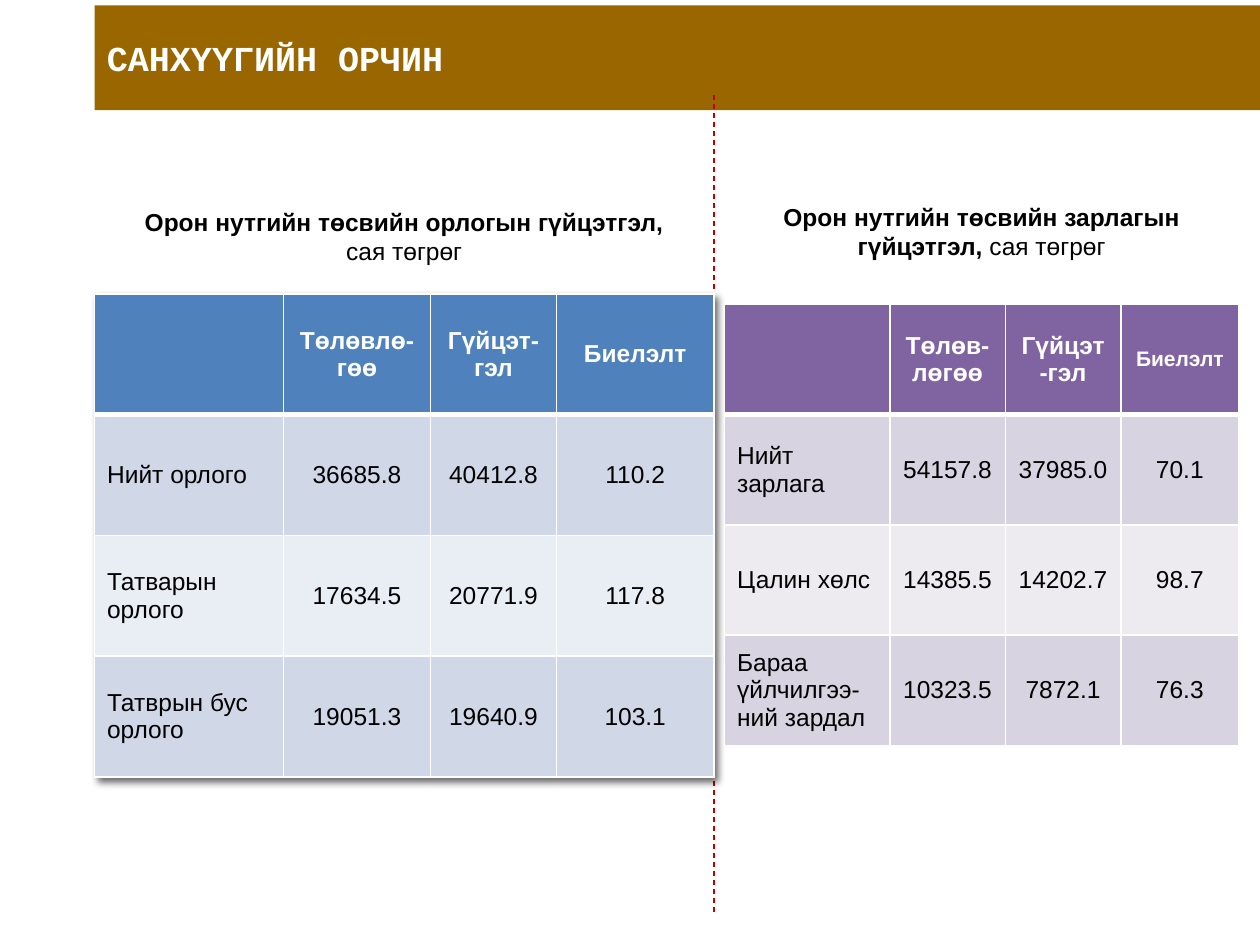
import pptx
import pptx.util
import pptx.dml.color
import pptx.enum.dml
import pptx.enum.shapes
import pptx.enum.text
import pptx.oxml
import pptx.oxml.ns
from lxml import etree

ALIGN = pptx.enum.text.PP_ALIGN
MIDDLE = pptx.enum.text.MSO_ANCHOR.MIDDLE
rgb = pptx.dml.color.RGBColor.from_string
qn = pptx.oxml.ns.qn

prs = pptx.Presentation()
prs.slide_width = pptx.util.Inches(10)
prs.slide_height = pptx.util.Inches(7.5)
unit = prs.slide_width / 120


def grid(*cells):
    return [pptx.util.Emu(round(c * unit)) for c in cells]


def add_run(p, text, size=14, color="000000", bold=False, font="Arial"):
    r = p.add_run()
    r.text = text
    r.font.size = pptx.util.Pt(size)
    r.font.name = font
    r.font.bold = bold
    r.font.color.rgb = rgb(color)


s = prs.slides.add_slide(prs.slide_layouts[6])

sp = s.shapes.add_shape(pptx.enum.shapes.MSO_SHAPE.RECTANGLE, *grid(9, 0.5, 111, 10))
sp.shadow.inherit = False
sp.fill.solid()
sp.fill.fore_color.rgb = rgb("996600")
sp.line.fill.background()
tf = sp.text_frame
tf.word_wrap = True
tf.vertical_anchor = MIDDLE
p = tf.paragraphs[0]
p.alignment = ALIGN.JUSTIFY
add_run(p, "САНХҮҮГИЙН ОРЧИН", 20, "FFFFFF", True, "Courier New")

divider = s.shapes.add_connector(
    pptx.enum.shapes.MSO_CONNECTOR.STRAIGHT, *grid(68, 9, 68, 87)
)
divider.line.color.rgb = rgb("C00000")
divider.line.width = pptx.util.Pt(0.75)
divider.line.dash_style = pptx.enum.dml.MSO_LINE.DASH
etree.SubElement(divider.line._get_or_add_ln().getparent(), qn("a:effectLst"))

panels = [
    {
        "caption": "Орон нутгийн төсвийн орлогын гүйцэтгэл,",
        "caption_at": (11, 20, 55, 5),
        "origin": (9, 28),
        "cols": (18, 14, 12, 15),
        "row": 11.5,
        "fills": ("4F81BD", "D0D8E8", "E9EDF4"),
        "last_size": 14,
        "shadow": True,
        "rows": [
            ("", "Төлөвлө-гөө", "Гүйцэт-гэл", "Биелэлт"),
            ("Нийт орлого", "36685.8", "40412.8", "110.2"),
            ("Татварын орлого", "17634.5", "20771.9", "117.8"),
            ("Татврын бус орлого", "19051.3", "19640.9", "103.1"),
        ],
    },
    {
        "caption": "Орон нутгийн төсвийн зарлагын гүйцэтгэл,",
        "caption_at": (69, 20, 49, 4),
        "origin": (69, 29),
        "cols": (15.75, 11, 11, 11.25),
        "row": 10.5,
        "fills": ("8064A2", "D8D3E0", "EDEAF0"),
        "last_size": 12,
        "shadow": False,
        "rows": [
            ("", "Төлөв-лөгөө", "Гүйцэт-гэл", "Биелэлт"),
            ("Нийт зарлага", "54157.8", "37985.0", "70.1"),
            ("Цалин хөлс", "14385.5", "14202.7", "98.7"),
            ("Бараа үйлчилгээ-ний зардал", "10323.5", "7872.1", "76.3"),
        ],
    },
]

for panel in panels:
    tf = s.shapes.add_textbox(*grid(*panel["caption_at"])).text_frame
    tf.word_wrap = True
    tf.vertical_anchor = MIDDLE
    p = tf.paragraphs[0]
    p.alignment = ALIGN.CENTER
    add_run(p, panel["caption"], bold=True)
    add_run(p, " сая төгрөг")

    rows, cols = panel["rows"], panel["cols"]
    size = (sum(cols), panel["row"] * len(rows))
    table = s.shapes.add_table(
        len(rows), len(cols), *grid(*panel["origin"], *size)
    ).table
    table.horz_banding = False
    for column, width in zip(table.columns, grid(*cols)):
        column.width = width
    if panel["shadow"]:
        table._tbl.tblPr.insert(0, pptx.oxml.parse_xml(
            f'<a:effectLst {pptx.oxml.ns.nsdecls("a")}>'
            '<a:outerShdw blurRad="50800" dist="38100" dir="2700000" algn="tl" rotWithShape="0">'
            '<a:srgbClr val="000000"><a:alpha val="60000"/></a:srgbClr>'
            '</a:outerShdw></a:effectLst>'
        ))

    header_fill, odd_fill, even_fill = panel["fills"]
    for i, row in enumerate(rows):
        table.rows[i].height = grid(panel["row"])[0]
        header = i == 0
        for j, text in enumerate(row):
            cell = table.cell(i, j)
            cell.vertical_anchor = MIDDLE
            tcPr = cell._tc.get_or_add_tcPr()
            for side in "LRTB":
                thick = (i, side) in ((0, "B"), (1, "T"))
                ln = etree.SubElement(
                    tcPr, qn("a:ln" + side), w=str(pptx.util.Pt(3 if thick else 1))
                )
                solid = etree.SubElement(ln, qn("a:solidFill"))
                etree.SubElement(solid, qn("a:srgbClr"), val="FFFFFF")
            cell.fill.solid()
            cell.fill.fore_color.rgb = rgb(
                header_fill if header else odd_fill if i % 2 else even_fill
            )
            p = cell.text_frame.paragraphs[0]
            p.alignment = ALIGN.CENTER if header or j else ALIGN.LEFT
            if text:
                last_header = header and j == len(row) - 1
                add_run(
                    p,
                    text,
                    panel["last_size"] if last_header else 14,
                    "FFFFFF" if header else "000000",
                    header,
                )

prs.save("out.pptx")
